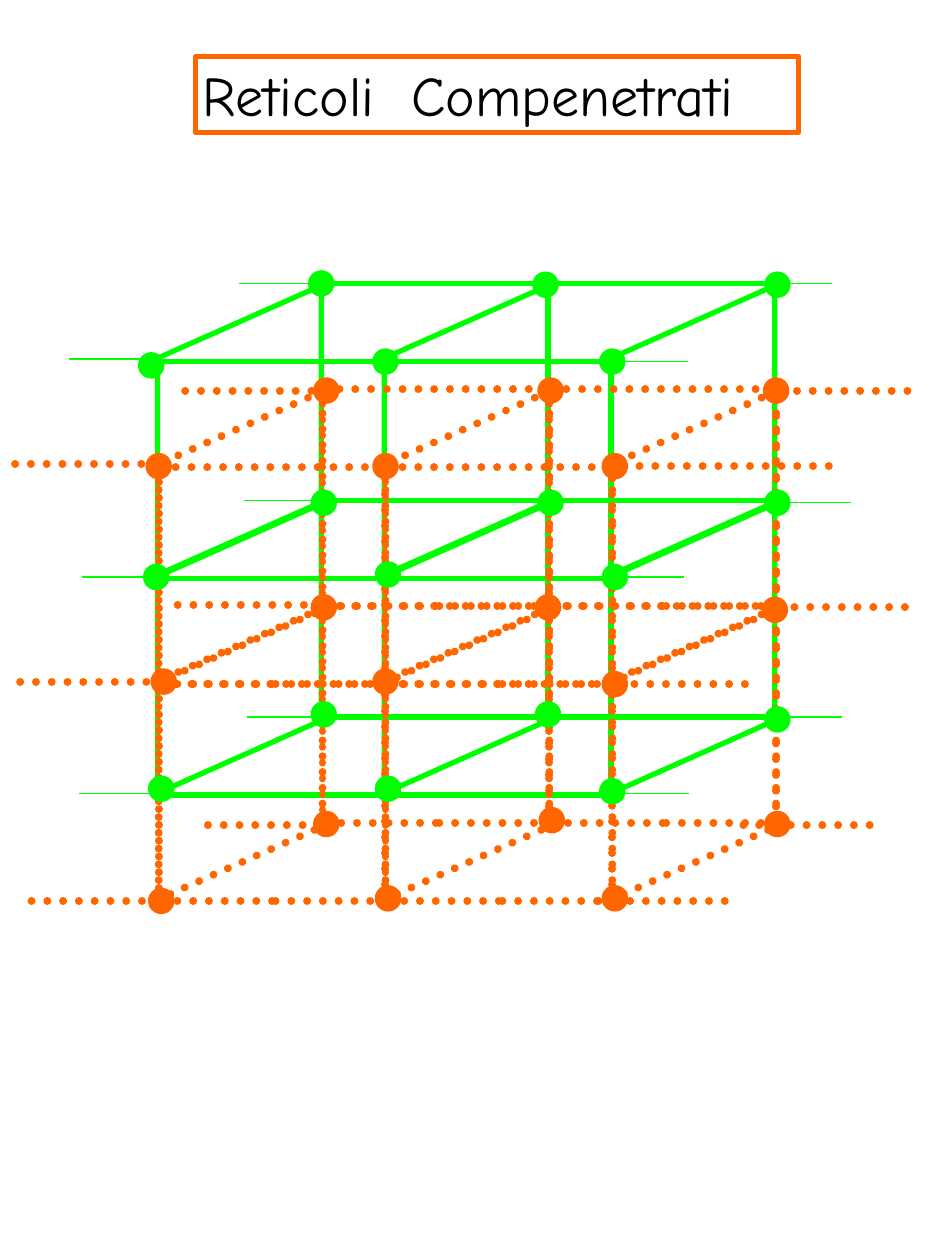
"""Build the slide of two interpenetrating cubic lattices."""
import pptx
from pptx.dml.color import RGBColor
from pptx.enum.dml import MSO_LINE
from pptx.enum.shapes import MSO_CONNECTOR, MSO_SHAPE
from pptx.enum.text import MSO_ANCHOR, PP_ALIGN
from pptx.oxml.ns import qn
from pptx.oxml.xmlchemy import OxmlElement
from pptx.util import Inches, Pt

GREEN = RGBColor(0x00, 0xFF, 0x00)
ORANGE = RGBColor(0xFF, 0x66, 0x00)
BLACK = RGBColor(0x00, 0x00, 0x00)

TITLE = "Reticoli  Compenetrati"
FONT = "Comic Neue"

STEP_X, STEP_Y = 1.8, 1.72
DEPTH_X, DEPTH_Y = 1.3, 0.62
SIDE_HEIGHT = 2.31
SIDE_SLANT = 0.444
ATOM = 0.2

GREEN_LATTICE = {
    "color": GREEN, "origin": (1.25, 2.87), "edge": 3, "bond": 0.75, "dotted": False,
    "atoms": [
        (1.1, 2.8), (2.96, 2.77), (4.76, 2.77), (2.45, 2.15), (4.23, 2.16), (6.07, 2.16),
        (1.14, 4.48), (2.98, 4.46), (4.78, 4.48), (2.47, 3.89), (4.27, 3.89), (6.07, 3.89),
        (1.18, 6.16), (2.98, 6.16), (4.76, 6.18), (2.47, 5.57), (4.25, 5.57), (6.07, 5.61),
    ],
    "bonds": [
        (0.55, 1.25, 2.85), (1.9, 2.6, 2.25), (5.9, 6.6, 2.25), (4.76, 5.46, 2.87),
        (4.73, 5.43, 4.58), (6.05, 6.75, 3.99), (1.94, 2.64, 3.97), (0.65, 1.35, 4.58),
        (0.63, 1.34, 6.3), (1.96, 2.66, 5.69), (5.98, 6.68, 5.69), (4.76, 5.47, 6.3),
    ],
}
ORANGE_LATTICE = {
    "color": ORANGE, "origin": (1.26, 3.71), "edge": 4.5, "bond": 4.5, "dotted": True,
    "atoms": [
        (1.16, 3.6), (2.96, 3.6), (4.78, 3.6), (2.49, 3), (4.27, 3), (6.06, 3),
        (1.2, 5.31), (2.96, 5.31), (4.78, 5.33), (2.47, 4.72), (4.25, 4.72), (6.05, 4.74),
        (1.18, 7.05), (2.98, 7.03), (4.78, 7.03), (2.49, 6.44), (4.28, 6.41), (6.07, 6.44),
    ],
    "bonds": [
        (4.95, 6.7, 3.7), (6.2, 7.3, 3.1), (6.18, 7.28, 4.82), (4.91, 6.01, 5.43),
        (0.16, 1.26, 5.41), (1.41, 2.51, 4.8), (0.12, 1.22, 3.68), (1.47, 2.56, 3.1),
        (0.25, 1.35, 7.15), (4.75, 5.85, 7.15), (5.9, 7, 6.55), (1.65, 2.75, 6.55),
    ],
}


def style_line(line, color, width, dotted=False):
    line.color.rgb = color
    line.width = Pt(width)
    if dotted:
        line.dash_style = MSO_LINE.ROUND_DOT
        line._get_or_add_ln().set("cap", "rnd")


def add_shape(shapes, kind, left, top, width, height):
    shape = shapes.add_shape(kind, Inches(left), Inches(top), Inches(width), Inches(height))
    shape.shadow.inherit = False
    shape.fill.background()
    return shape


def add_cells(shapes, lattice):
    left, top = lattice["origin"]
    pen = lattice["color"], lattice["edge"], lattice["dotted"]
    for row in range(2):
        y = top + row * STEP_Y
        for column in range(2):
            x = left + column * STEP_X
            for dx, dy in ((0, 0), (DEPTH_X, -DEPTH_Y)):
                face = add_shape(shapes, MSO_SHAPE.RECTANGLE, x + dx, y + dy, STEP_X, STEP_Y)
                style_line(face.line, *pen)
        for column in range(3):
            center_x = left + column * STEP_X + DEPTH_X / 2
            center_y = y + (STEP_Y - DEPTH_Y) / 2
            side = add_shape(shapes, MSO_SHAPE.PARALLELOGRAM, center_x - SIDE_HEIGHT / 2,
                             center_y - DEPTH_X / 2, SIDE_HEIGHT, DEPTH_X)
            side.adjustments[0] = SIDE_SLANT
            side.rotation = 90
            side._element.spPr.find(qn("a:xfrm")).set("flipV", "1")
            style_line(side.line, *pen)


def add_bonds(shapes, lattice):
    for start, end, y in lattice["bonds"]:
        bond = shapes.add_connector(MSO_CONNECTOR.STRAIGHT, Inches(start), Inches(y),
                                    Inches(end), Inches(y))
        style_line(bond.line, lattice["color"], lattice["bond"], lattice["dotted"])
        bond._element.spPr.append(OxmlElement("a:effectLst"))


def add_atoms(shapes, lattice):
    for left, top in lattice["atoms"]:
        atom = add_shape(shapes, MSO_SHAPE.OVAL, left, top, ATOM, ATOM)
        atom.fill.solid()
        atom.fill.fore_color.rgb = lattice["color"]
        style_line(atom.line, lattice["color"], 0.75)


def add_title(shapes):
    title = add_shape(shapes, MSO_SHAPE.RECTANGLE, 1.55, 0.45, 4.79, 0.6)
    style_line(title.line, ORANGE, 3)
    frame = title.text_frame
    frame.word_wrap = True
    frame.vertical_anchor = MSO_ANCHOR.TOP
    frame.margin_left = frame.margin_right = Inches(0.06)
    frame.margin_top = frame.margin_bottom = Inches(0.03)
    paragraph = frame.paragraphs[0]
    paragraph.text = TITLE
    paragraph.alignment = PP_ALIGN.LEFT
    paragraph.font.name = FONT
    paragraph.font.size = Pt(32)
    paragraph.font.color.rgb = BLACK


def main():
    deck = pptx.Presentation()
    deck.slide_width, deck.slide_height = Inches(7.5), Inches(10)
    shapes = deck.slides.add_slide(deck.slide_layouts[6]).shapes
    add_cells(shapes, GREEN_LATTICE)
    add_cells(shapes.add_group_shape().shapes, ORANGE_LATTICE)
    add_bonds(shapes, GREEN_LATTICE)
    add_atoms(shapes, GREEN_LATTICE)
    add_atoms(shapes, ORANGE_LATTICE)
    add_bonds(shapes, ORANGE_LATTICE)
    add_title(shapes)
    deck.save("out.pptx")


if __name__ == "__main__":
    main()
